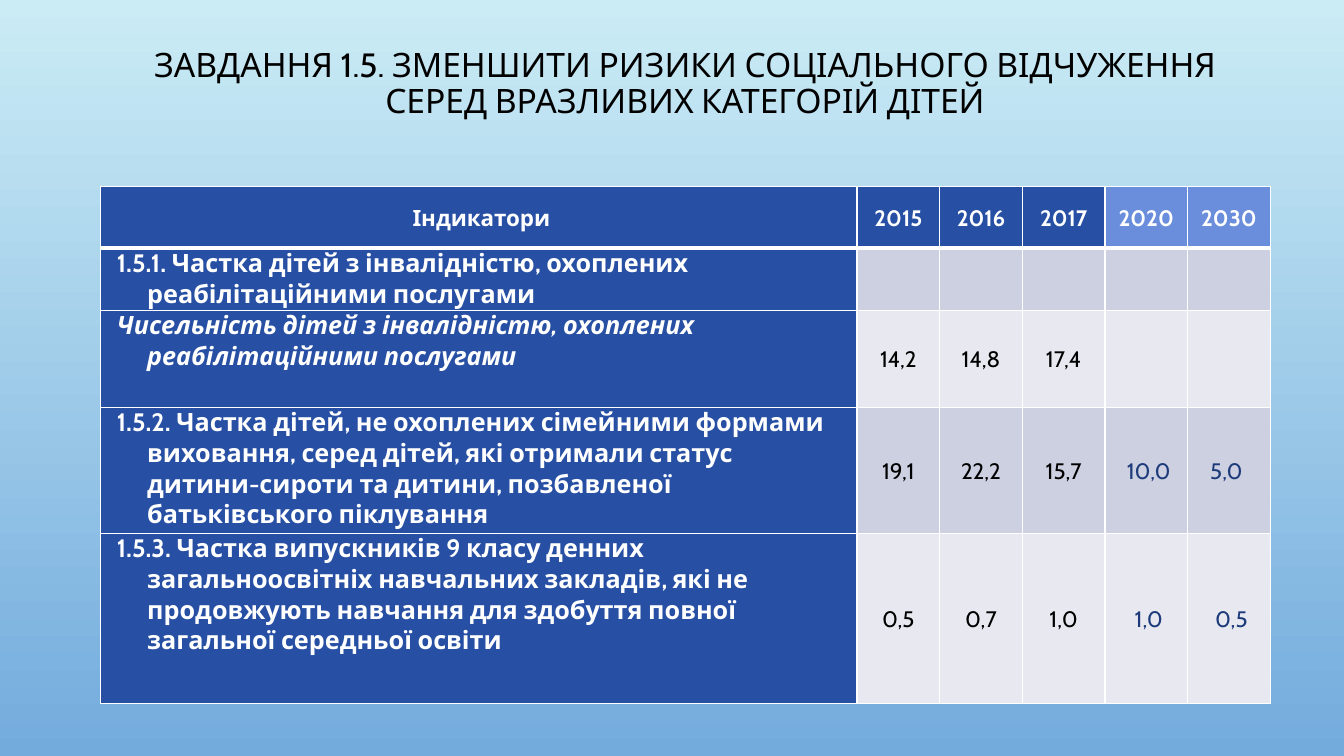
import pptx
import pptx.util
import pptx.dml.color
import pptx.enum.text
import pptx.oxml.ns
from lxml import etree

Inches = pptx.util.Inches
Pt = pptx.util.Pt
RGBColor = pptx.dml.color.RGBColor
Align = pptx.enum.text.PP_ALIGN
Anchor = pptx.enum.text.MSO_ANCHOR

SKY_TOP = RGBColor(0xCB, 0xEC, 0xF5)
SKY_BOTTOM = RGBColor(0x73, 0xAB, 0xDD)
BLACK = RGBColor(0, 0, 0)
WHITE = RGBColor(0xFF, 0xFF, 0xFF)
BLUE = RGBColor(0x27, 0x4F, 0xA4)
TARGET_BLUE = RGBColor(0x6A, 0x8E, 0xDC)
TARGET_TEXT = RGBColor(0x1D, 0x3B, 0x7B)
BANDS = (RGBColor(0xCD, 0xD0, 0xE0), RGBColor(0xE8, 0xE9, 0xF0))

TITLE = ("ЗАВДАННЯ 1.5. ЗМЕНШИТИ РИЗИКИ СОЦІАЛЬНОГО ВІДЧУЖЕННЯ "
         "СЕРЕД ВРАЗЛИВИХ КАТЕГОРІЙ ДІТЕЙ")
HEADER = (" Індикатори", "2015", "2016", "2017", "2020", "2030")
FIRST_TARGET = HEADER.index("2020")
INDICATORS = (
    ("1.5.1. Частка дітей з інвалідністю, охоплених реабілітаційними послугами",
     "", "", "", "", ""),
    ("Чисельність дітей з інвалідністю, охоплених реабілітаційними послугами",
     "14,2", "14,8", "17,4", "", ""),
    ("1.5.2. Частка дітей, не охоплених сімейними формами виховання, серед дітей, "
     "які отримали статус дитини-сироти та дитини, позбавленої батьківського піклування",
     "19,1", "22,2", "15,7", " 10,0", "5,0 "),
    ("1.5.3. Частка випускників 9 класу денних загальноосвітніх навчальних закладів, "
     "які не продовжують навчання для здобуття повної загальної середньої освіти",
     "0,5", "0,7", "1,0", " 1,0", " 0,5"),
)
ITALIC_ROW = 2
COLUMN_WIDTHS = (7.5,) + (0.82,) * 5
ROW_HEIGHTS = (0.61, 0.62, 0.96, 1.25, 1.69)


def write(frame, text, *, font="Cabin", size=16, color=BLACK, bold=False,
          italic=False, align=Align.CENTER, spacing=1.07, hanging=None):
    """Fill a text frame; hanging is a (left margin, first line indent) pair."""
    paragraph = frame.paragraphs[0]
    paragraph.alignment = align
    paragraph.line_spacing = spacing
    if hanging:
        properties = paragraph._p.get_or_add_pPr()
        for name, length in zip(("marL", "indent"), hanging):
            properties.set(name, str(Inches(length)))
    span = paragraph.add_run()
    span.text = text
    span.font.name = font
    span.font.size = Pt(size)
    span.font.bold = bold
    span.font.italic = italic
    span.font.color.rgb = color


class IndicatorSlide:
    def __init__(self, deck):
        self.slide = deck.slides.add_slide(deck.slide_layouts[5])

    def background(self, top, bottom):
        fill = self.slide.background.fill
        fill.gradient()
        fill.gradient_angle = 270
        for stop, color, position in zip(fill.gradient_stops, (top, bottom), (0, 1)):
            stop.color.rgb = color
            stop.position = position

    def title(self, text, left, top, width, height):
        box = self.slide.shapes.title
        box.left, box.top = Inches(left), Inches(top)
        box.width, box.height = Inches(width), Inches(height)
        frame = box.text_frame
        frame.word_wrap = True
        frame.auto_size = pptx.enum.text.MSO_AUTO_SIZE.NONE
        frame.vertical_anchor = Anchor.MIDDLE
        write(frame, text, size=24, spacing=0.9)

    def borders(self, cell, top=1, bottom=1):
        properties = cell._tc.get_or_add_tcPr()
        qn = pptx.oxml.ns.qn
        for side, width in (("L", 1), ("R", 1), ("T", top), ("B", bottom)):
            line = etree.SubElement(properties, qn(f"a:ln{side}"), w=str(Pt(width)))
            fill = etree.SubElement(line, qn("a:solidFill"))
            etree.SubElement(fill, qn("a:srgbClr"), val=str(WHITE))

    def cell(self, cell, text, row, column):
        self.borders(cell, top=3 if row == 1 else 1, bottom=3 if row == 0 else 1)
        cell.margin_left = cell.margin_right = Inches(0.07)
        cell.margin_top = cell.margin_bottom = 0
        target = column >= FIRST_TARGET
        style = {}
        if row == 0:
            background = TARGET_BLUE if target else BLUE
            style = dict(color=WHITE, bold=True)
        elif column == 0:
            background = BLUE
            style = dict(size=18, color=WHITE, bold=True, italic=row == ITALIC_ROW,
                         align=Align.LEFT, spacing=1.0, hanging=(0.39, -0.3))
        else:
            background = BANDS[(row - 1) % 2]
            style = dict(color=TARGET_TEXT if target else BLACK)
        cell.fill.solid()
        cell.fill.fore_color.rgb = background
        label = row > 0 and column == 0
        cell.vertical_anchor = Anchor.TOP if label else Anchor.MIDDLE
        if text:
            write(cell.text_frame, text, **style)

    def table(self, rows, left, top):
        frame = self.slide.shapes.add_table(
            len(rows), len(COLUMN_WIDTHS), Inches(left), Inches(top),
            Inches(sum(COLUMN_WIDTHS)), Inches(sum(ROW_HEIGHTS)))
        table = frame.table
        table.horz_banding = False
        for column, width in zip(table.columns, COLUMN_WIDTHS):
            column.width = Inches(width)
        for row, height in zip(table.rows, ROW_HEIGHTS):
            row.height = Inches(height)
        for i, row in enumerate(rows):
            for j, text in enumerate(row):
                self.cell(table.cell(i, j), text, i, j)


def main():
    deck = pptx.Presentation()
    deck.slide_width, deck.slide_height = Inches(13.33), Inches(7.5)
    page = IndicatorSlide(deck)
    page.background(SKY_TOP, SKY_BOTTOM)
    page.title(TITLE, 1.13, 0.37, 11.33, 0.94)
    page.table((HEADER,) + INDICATORS, 1, 1.85)
    deck.save("out.pptx")


if __name__ == "__main__":
    main()
